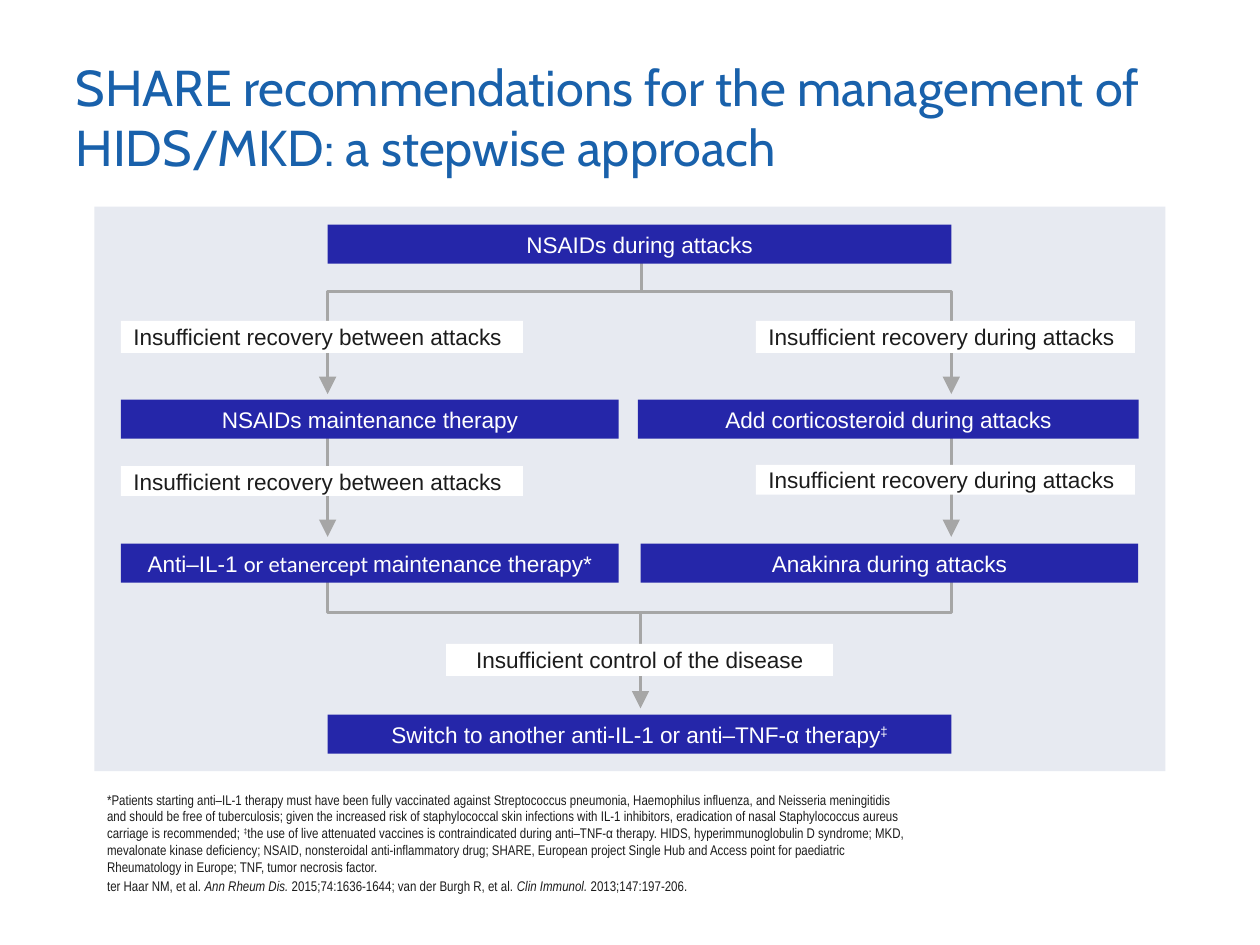
from pptx import Presentation
from pptx.dml.color import RGBColor
from pptx.enum.shapes import MSO_CONNECTOR, MSO_SHAPE
from pptx.enum.text import MSO_ANCHOR, MSO_AUTO_SIZE, PP_ALIGN
from pptx.oxml.ns import qn
from pptx.util import Pt
from lxml.etree import SubElement

BLUE, GREY, PALE = "2526A9", "A6A6A6", "E7EAF1"
WHITE, INK, HEAD = "FFFFFF", "1C1C1C", "1961AB"
LEFT, MID, RIGHT = 187.2, 366, 543.6
EDGE, WIDE = 69.1, 284.4

TITLE = "SHARE recommendations for the management of HIDS/MKD: a stepwise approach"
NOTES = [
    [("*Patients starting anti–IL-1 therapy must have been fully vaccinated against Streptococcus pneumonia, "
      "Haemophilus influenza, and Neisseria meningitidis and should be free of tuberculosis; given the "
      "increased risk of staphylococcal skin infections with IL-1 inhibitors, eradication of nasal "
      "Staphylococcus aureus carriage is recommended; ", ""),
     ("‡", "super"),
     ("the use of live attenuated vaccines is contraindicated during anti–TNF-α therapy. HIDS, "
      "hyperimmunoglobulin D syndrome; MKD, mevalonate kinase deficiency; NSAID, nonsteroidal "
      "anti-inflammatory drug; SHARE, European project Single Hub and Access point for paediatric "
      "Rheumatology in Europe; TNF, tumor necrosis factor.", "")],
    [("ter Haar NM, et al. ", ""), ("Ann Rheum Dis.", "italic"),
     (" 2015;74:1636-1644; van der Burgh R, et al. ", ""),
     ("Clin Immunol. ", "italic"), ("2013;147:197-206.", "")],
]
STEPS = [
    (LEFT, 128.4, 356.4, [("NSAIDs during attacks", "")]),
    (EDGE, 228.4, WIDE, [("NSAIDs maintenance therapy", "")]),
    (364.5, 228.4, 286.2, [("Add corticosteroid during attacks", "")]),
    (EDGE, 310.6, WIDE, [("Anti–IL-1 ", ""), ("or etanercept ", "Calibri"), ("maintenance therapy*", "")]),
    (366, 310.6, WIDE, [("Anakinra during attacks", "")]),
    (LEFT, 408.3, 356.4, [("Switch to another anti-IL-1 or anti–TNF-α therapy", ""), ("‡", "super")]),
]
BETWEEN = "Insufficient recovery between attacks"
DURING = "Insufficient recovery during attacks"
LABELS = [
    (EDGE, 183.4, 229.7, 18.3, BETWEEN, PP_ALIGN.LEFT),
    (432, 183.4, 216.5, 18.3, DURING, PP_ALIGN.LEFT),
    (EDGE, 266.4, 229.7, 17, BETWEEN, PP_ALIGN.LEFT),
    (432, 265.7, 216.5, 17, DURING, PP_ALIGN.LEFT),
    (255, 367.9, 221, 18.3, "Insufficient control of the disease", PP_ALIGN.CENTER),
]
FORKS = [(185, 166.5), (331.2, 350)]
LINES = [(MID + 0.5, 146.2, 166.5, False), (MID, 350, 404.8, True)]
LINES += [(x, top, end, True) for x in (LEFT, RIGHT) for top, end in ((187.9, 225.2), (242.6, 306.8))]


def color(code):
    return RGBColor.from_string(code)


def write(para, parts, face, size, code):
    for text, style in parts:
        run = para.add_run()
        run.text = text
        font = run.font
        font.name = "Calibri" if style == "Calibri" else face
        font.size = Pt(size)
        font.color.rgb = color(code)
        if style == "italic":
            font.italic = True
        if style == "super":
            run._r.get_or_add_rPr().set("baseline", "30000")


def place(shape, *spot):
    shape.left, shape.top, shape.width, shape.height = map(Pt, spot)


def block(spot, fill):
    shape = slide.shapes.add_shape(MSO_SHAPE.RECTANGLE, *map(Pt, spot))
    shape.shadow.inherit = False
    shape.fill.solid()
    shape.fill.fore_color.rgb = color(fill)
    shape.line.fill.background()
    return shape


def label(spot, fill, parts, code, align=PP_ALIGN.CENTER, pad=1):
    frame = block(spot, fill).text_frame
    frame.word_wrap = align == PP_ALIGN.CENTER
    frame.vertical_anchor = MSO_ANCHOR.MIDDLE
    frame.margin_top = frame.margin_bottom = Pt(pad)
    para = frame.paragraphs[0]
    para.alignment = align
    write(para, parts, "Arial", 12.9, code)


def stroke(line):
    line.color.rgb = color(GREY)
    line.width = Pt(1.5)


def fork(tip, bar):
    form = slide.shapes.build_freeform(Pt(LEFT), Pt(tip))
    dots = [(LEFT, bar), (RIGHT, bar), (RIGHT, tip)]
    form.add_line_segments([(Pt(x), Pt(y)) for x, y in dots], close=False)
    shape = form.convert_to_shape()
    shape.shadow.inherit = False
    shape.fill.background()
    stroke(shape.line)


def drop(x, top, end, arrow):
    link = slide.shapes.add_connector(MSO_CONNECTOR.STRAIGHT, Pt(x), Pt(top), Pt(x), Pt(end))
    stroke(link.line)
    if arrow:
        SubElement(link.line._get_or_add_ln(), qn("a:tailEnd"), type="triangle", w="lg", len="lg")
    SubElement(link._element.spPr, qn("a:effectLst"))


deck = Presentation()
deck.slide_width, deck.slide_height = Pt(720), Pt(540)
slide = deck.slides.add_slide(deck.slide_layouts[1])

title, body = slide.placeholders
place(title, 36, 21.6, 648, 90)
frame = title.text_frame
frame.text = TITLE
frame.auto_size = MSO_AUTO_SIZE.NONE
frame.vertical_anchor = MSO_ANCHOR.MIDDLE
para = frame.paragraphs[0]
para.alignment = PP_ALIGN.LEFT
font = para.runs[0].font
font.name, font.size = "Cabin", Pt(28.8)
font.color.rgb = color(HEAD)

place(body, 54, 445.7, 473.8, 69.1)
frame = body.text_frame
frame.auto_size = MSO_AUTO_SIZE.NONE
frame.vertical_anchor = MSO_ANCHOR.BOTTOM
for n, parts in enumerate(NOTES):
    para = frame.add_paragraph() if n else frame.paragraphs[0]
    para.space_before = Pt(1.6 if n else 0)
    props = para._p.get_or_add_pPr()
    props.set("marL", "0")
    props.set("indent", "0")
    SubElement(props, qn("a:buNone"))
    write(para, parts, "Arial Narrow", 8, INK)

block((54, 118.1, 612, 322.6), PALE)
for tip, bar in FORKS:
    fork(tip, bar)
for line in LINES:
    drop(*line)
for x, y, w, parts in STEPS:
    label((x, y, w, 22.3), BLUE, parts, WHITE)
for x, y, w, h, text, align in LABELS:
    label((x, y, w, h), WHITE, [(text, "")], INK, align)

deck.save("out.pptx")
